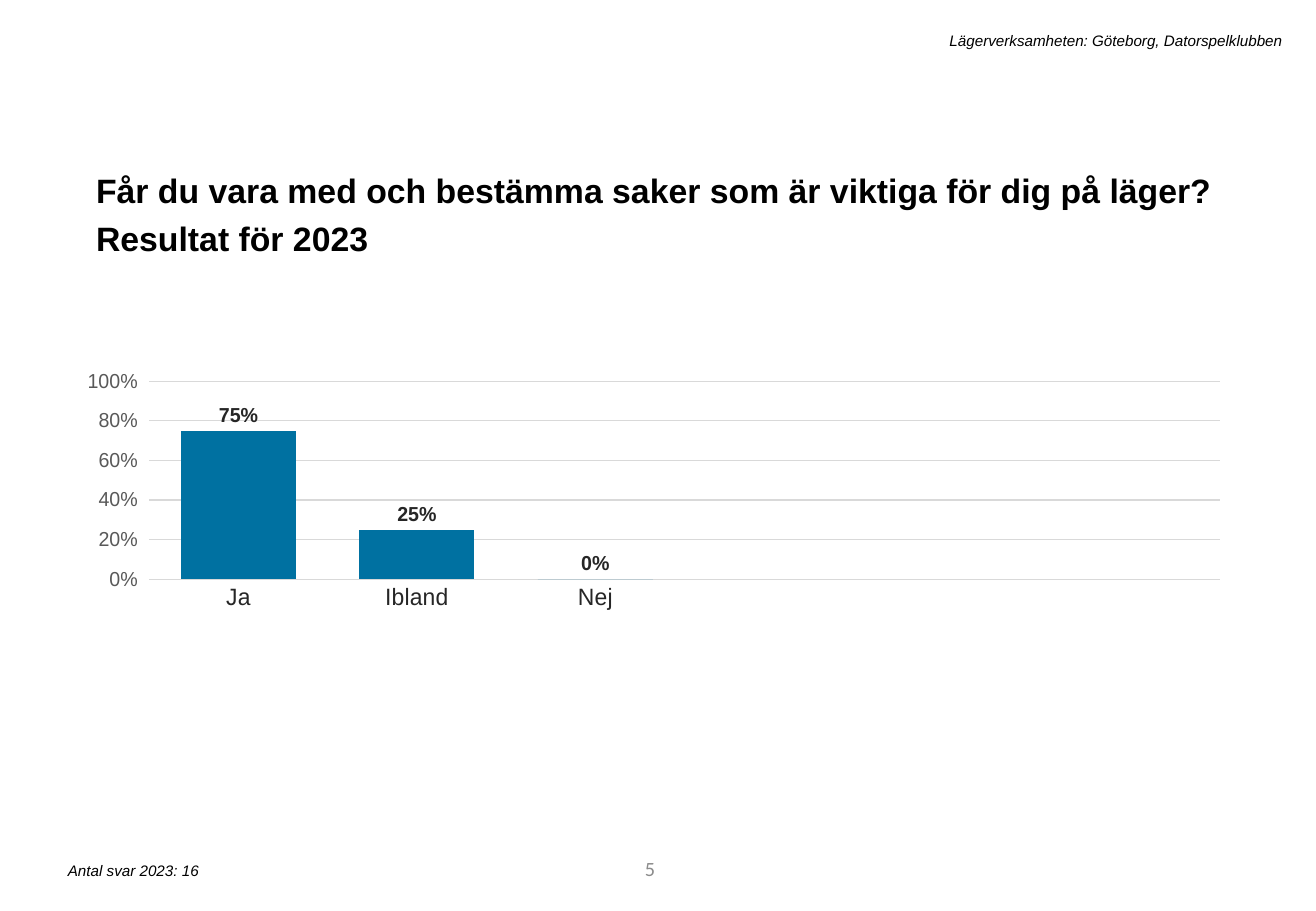
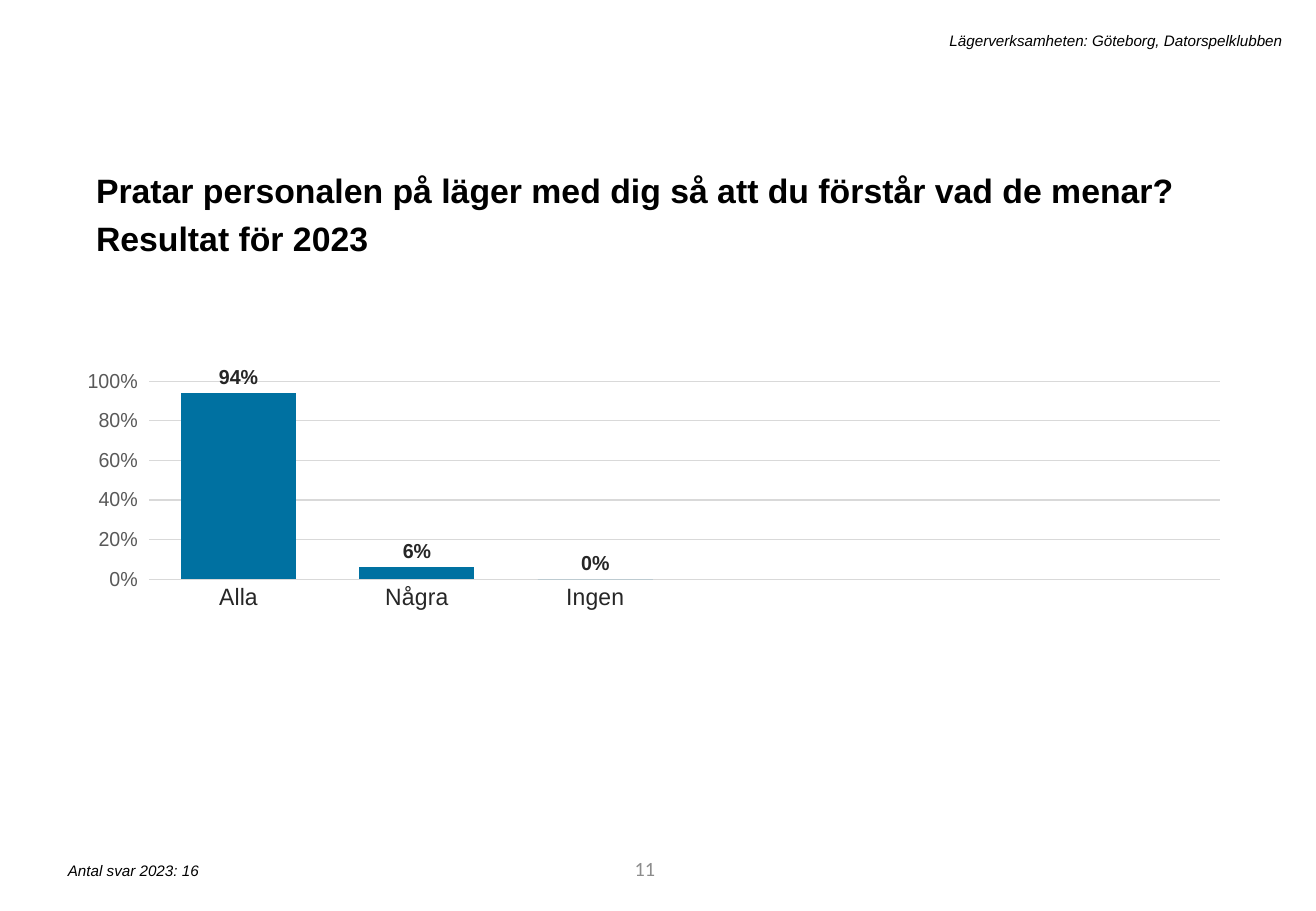
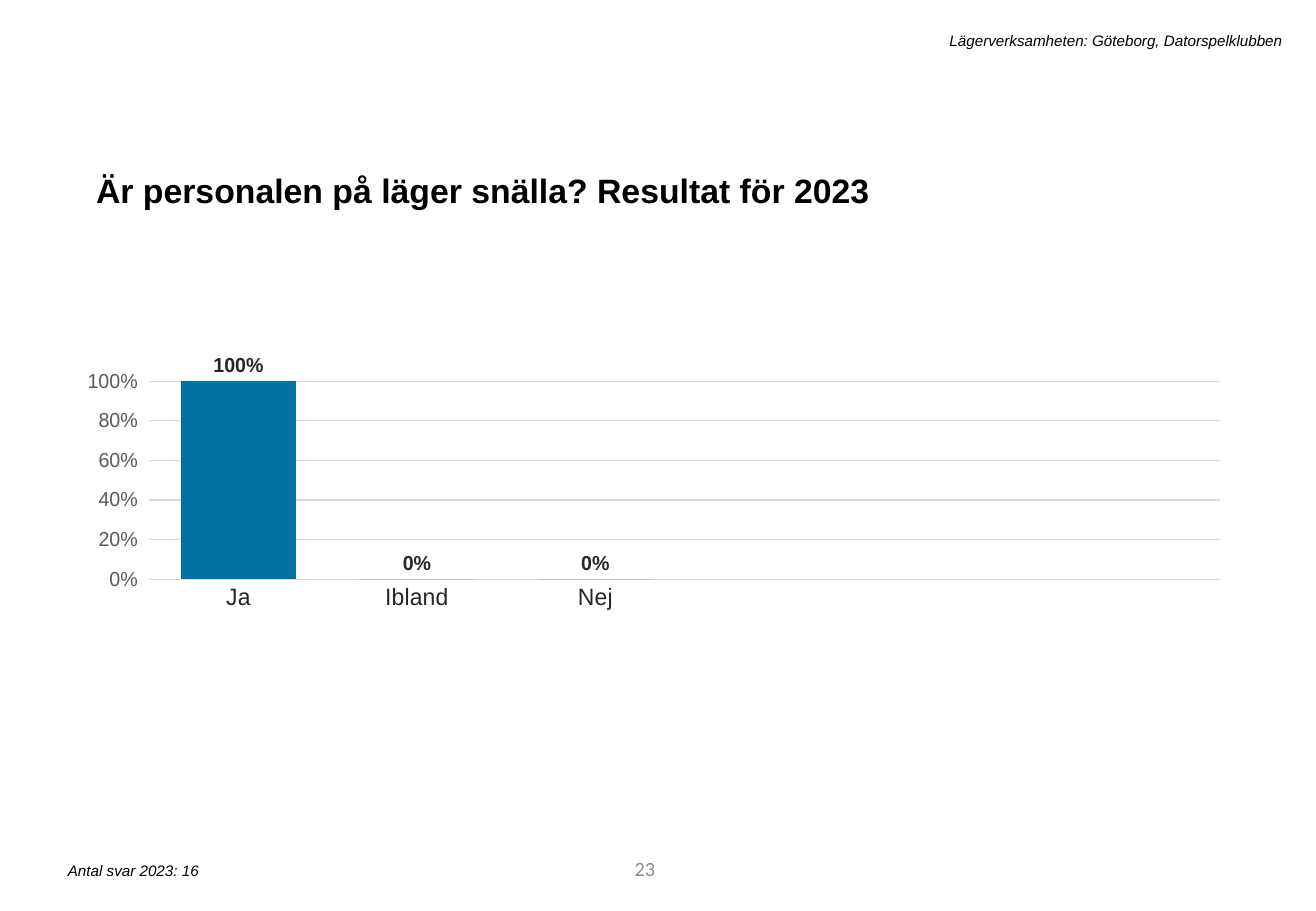
from dataclasses import dataclass

from pptx import Presentation
from pptx.chart.data import CategoryChartData
from pptx.dml.color import RGBColor
from pptx.enum.chart import XL_CHART_TYPE, XL_LABEL_POSITION, XL_TICK_MARK
from pptx.enum.text import MSO_ANCHOR, MSO_AUTO_SIZE, PP_ALIGN
from pptx.oxml.ns import qn
from pptx.oxml.xmlchemy import OxmlElement
from pptx.util import Inches, Pt

COLUMNS = XL_CHART_TYPE.COLUMN_CLUSTERED
OUTSIDE_END = XL_LABEL_POSITION.OUTSIDE_END
TICK_NONE, TICK_OUTSIDE = XL_TICK_MARK.NONE, XL_TICK_MARK.OUTSIDE
TOP, MIDDLE = MSO_ANCHOR.TOP, MSO_ANCHOR.MIDDLE
LEFT, RIGHT = PP_ALIGN.LEFT, PP_ALIGN.RIGHT
GROW = MSO_AUTO_SIZE.SHAPE_TO_FIT_TEXT
TITLE_ONLY = 5


@dataclass(frozen=True)
class Theme:
    font: str = "Arial"
    number_font: str = "Calibri"
    ink: str = "000000"
    label: str = "262626"
    axis: str = "595959"
    grid: str = "D9D9D9"
    bar: str = "0071A1"
    page_number: str = "8C8C8C"
    title_size: int = 20
    category_size: int = 14
    value_size: int = 12
    chart_size: int = 10
    note_size: int = 9
    grid_width: float = 0.75


THEME = Theme()

# Boxes: left, top, width, height in inches
TITLE_BOX = (0.69, 1.28, 9.4, 0.47)
CHART_BOX = (0.72, 2.53, 9.4, 3.95)
HEADER_BOX = (1.79, 0.21, 8.86, 0.25)
FOOTER_BOX = (0.46, 7.04, 4.41, 0.25)
NUMBER_BOX = (3.05, 6.95, 2.44, 0.4)

# Plot area as shares of the chart box
PLOT = {"x": 0.025, "y": 0.154, "w": 0.966, "h": 0.413}
CATEGORY_SLOTS = 6

HEADER = "Lägerverksamheten: Göteborg, Datorspelklubben"
FOOTER = "Antal svar 2023: 16"
PAGES = [
    (5, "Får du vara med och bestämma saker som är viktiga för dig på läger? Resultat för 2023",
     {"Ja": 0.75, "Ibland": 0.25, "Nej": 0}),
    (11, "Pratar personalen på läger med dig så att du förstår vad de menar? Resultat för 2023",
     {"Alla": 0.94, "Några": 0.06, "Ingen": 0}),
    (23, "Är personalen på läger snälla? Resultat för 2023",
     {"Ja": 1, "Ibland": 0, "Nej": 0}),
]


def inches(box):
    return [Inches(length) for length in box]


def style_font(font, size, color, name=THEME.font, bold=False, italic=False):
    font.name = name
    font.size = Pt(size)
    font.bold = bold
    font.italic = italic
    font.color.rgb = RGBColor.from_string(color)


def style_line(line):
    line.color.rgb = RGBColor.from_string(THEME.grid)
    line.width = Pt(THEME.grid_width)


def fill_text(shape, text, align, anchor=TOP, **font):
    """Write one styled paragraph into the shape and return it."""
    frame = shape.text_frame
    frame.text = text
    frame.word_wrap = True
    frame.vertical_anchor = anchor
    para = frame.paragraphs[0]
    para.alignment = align
    style_font(para.runs[0].font, **font)
    return para


def add_title(page, box, text):
    title = page.shapes.title
    title.left, title.top, title.width, title.height = inches(box)
    para = fill_text(title, text, LEFT, size=THEME.title_size, color=THEME.ink, bold=True)
    para.line_spacing = 1.2
    para.space_before = Pt(10)
    title.text_frame.auto_size = GROW


def add_note(page, box, text, align):
    note = page.shapes.add_textbox(*inches(box))
    fill_text(note, text, align, size=THEME.note_size, color=THEME.ink, italic=True)
    note.text_frame.auto_size = GROW


def add_page_number(page, box, number):
    fill_text(page.shapes.add_textbox(*inches(box)), str(number), RIGHT, MIDDLE,
              size=THEME.value_size, color=THEME.page_number, name=THEME.number_font)


def place_plot(chart):
    """Fix the inner plot area, which python-pptx has no method for."""
    plot_area = chart.plots[0]._element.getparent()
    for old in plot_area.findall(qn("c:layout")):
        plot_area.remove(old)
    layout, manual = OxmlElement("c:layout"), OxmlElement("c:manualLayout")
    settings = {"layoutTarget": "inner", "xMode": "edge", "yMode": "edge", **PLOT}
    for tag, value in settings.items():
        setting = OxmlElement(f"c:{tag}")
        setting.set("val", str(value))
        manual.append(setting)
    layout.append(manual)
    plot_area.insert(0, layout)


def style_axes(chart):
    categories, values = chart.category_axis, chart.value_axis
    categories.major_tick_mark = TICK_NONE
    categories.has_major_gridlines = False
    style_line(categories.format.line)
    style_font(categories.tick_labels.font, THEME.category_size, THEME.label)

    values.minimum_scale, values.maximum_scale, values.major_unit = 0, 1, 0.2
    values.major_tick_mark = TICK_OUTSIDE
    values.format.line.fill.background()
    values.has_major_gridlines = True
    style_line(values.major_gridlines.format.line)
    values.tick_labels.number_format = "0%"
    values.tick_labels.number_format_is_linked = False
    style_font(values.tick_labels.font, THEME.value_size, THEME.axis)


def style_bars(plot):
    plot.gap_width = 55
    plot.vary_by_categories = False
    series = plot.series[0]
    series.invert_if_negative = False
    series.format.fill.solid()
    series.format.fill.fore_color.rgb = RGBColor.from_string(THEME.bar)
    labels = series.data_labels
    labels.show_value = True
    labels.position = OUTSIDE_END
    labels.number_format = "0%"
    labels.number_format_is_linked = False
    style_font(labels.font, THEME.value_size, THEME.label, bold=True)


def add_answer_chart(page, box, answers):
    """Chart the answer shares, leaving the unused category slots empty."""
    unused = CATEGORY_SLOTS - len(answers)
    data = CategoryChartData(number_format="0%")
    data.categories = [*answers, *[""] * unused]
    data.add_series("Series 1", [*answers.values(), *[None] * unused])
    chart = page.shapes.add_chart(COLUMNS, *inches(box), data).chart
    chart.has_title = False
    chart.has_legend = False
    style_font(chart.font, THEME.chart_size, THEME.ink)
    style_axes(chart)
    style_bars(chart.plots[0])
    place_plot(chart)


def add_question_page(deck, number, question, answers):
    page = deck.slides.add_slide(deck.slide_layouts[TITLE_ONLY])
    add_page_number(page, NUMBER_BOX, number)
    add_title(page, TITLE_BOX, question)
    add_note(page, HEADER_BOX, HEADER, RIGHT)
    add_note(page, FOOTER_BOX, FOOTER, LEFT)
    add_answer_chart(page, CHART_BOX, answers)


def main():
    deck = Presentation()
    deck.slide_width, deck.slide_height = Inches(10.83), Inches(7.5)
    for number, question, answers in PAGES:
        add_question_page(deck, number, question, answers)
    deck.save("out.pptx")


if __name__ == "__main__":
    main()
